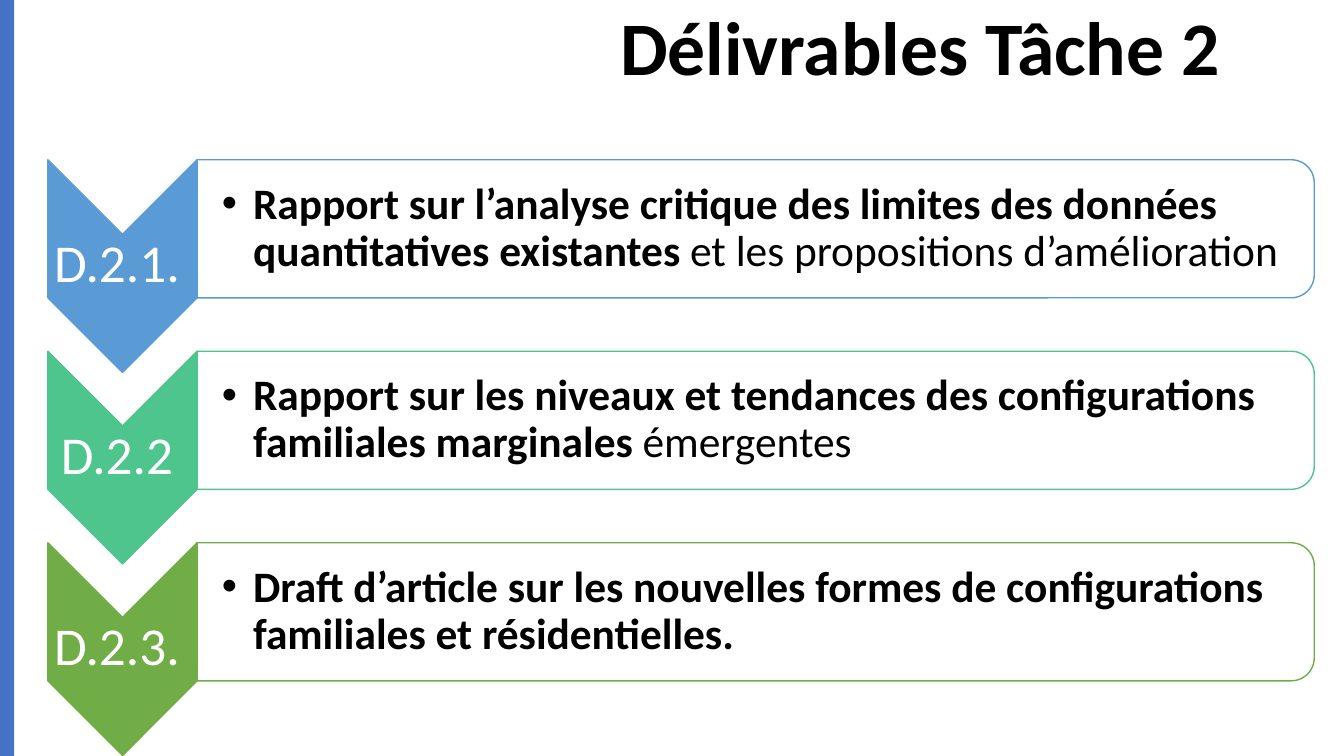
from lxml.etree import SubElement
from pptx import Presentation
from pptx.dml.color import RGBColor
from pptx.enum.shapes import MSO_SHAPE as SHAPE
from pptx.enum.text import MSO_ANCHOR as ANCHOR, MSO_AUTO_SIZE as AUTO_SIZE, PP_ALIGN as ALIGN
from pptx.oxml.ns import qn
from pptx.util import Pt

PX = 9144
BLACK = RGBColor(0x00, 0x00, 0x00)
WHITE = RGBColor(0xFF, 0xFF, 0xFF)
BAR_BLUE = RGBColor(0x44, 0x72, 0xC4)
BLUE = RGBColor(0x5B, 0x9B, 0xD5)
MINT = RGBColor(0x4D, 0xC5, 0x8D)
GREEN = RGBColor(0x70, 0xAD, 0x47)

DELIVERABLES = [
    ("D.2.1. ", BLUE,
     "Rapport sur l’analyse critique des limites des données quantitatives existantes",
     " et les propositions d’amélioration"),
    ("D.2.2 ", MINT,
     "Rapport sur les niveaux et tendances des configurations familiales marginales",
     " émergentes"),
    ("D.2.3. ", GREEN,
     "Draft d’article sur les nouvelles formes de configurations familiales et résidentielles.",
     ""),
]
ROW_STEP = 190


def add_block(preset, left, top, width, height, fill, outline=None):
    block = slide.shapes.add_shape(preset, left * PX, top * PX, width * PX, height * PX)
    block.shadow.inherit = False
    block.fill.solid()
    block.fill.fore_color.rgb = fill
    if outline is None:
        block.line.fill.background()
    else:
        block.rotation = 90
        block.line.color.rgb = outline
        block.line.width = Pt(1)
    return block


def write(shape, parts, size, color, align, margins):
    frame = shape.text_frame
    frame.word_wrap = True
    frame.auto_size = AUTO_SIZE.NONE
    frame.vertical_anchor = ANCHOR.MIDDLE
    frame.margin_left, frame.margin_top, frame.margin_right, frame.margin_bottom = [
        margin * PX for margin in margins]
    paragraph = frame.paragraphs[0]
    paragraph.alignment = align
    paragraph.line_spacing = 0.9
    for words, bold in parts:
        run = paragraph.add_run()
        run.text = words
        run.font.name = "Calibri"
        run.font.size = Pt(size)
        run.font.bold = bold
        run.font.color.rgb = color
    return paragraph


prs = Presentation()
prs.slide_width = 1333 * PX
prs.slide_height = 750 * PX
slide = prs.slides.add_slide(prs.slide_layouts[5])

title = slide.shapes.title
title.left, title.top, title.width, title.height = 605 * PX, -22 * PX, 1032 * PX, 145 * PX
write(title, [("Délivrables Tâche 2", True)], 54, BLACK, ALIGN.LEFT, (10, 5, 10, 5))

add_block(SHAPE.RECTANGLE, 0, 0, 14, 750, BAR_BLUE)

for row, (code, color, key_words, ending) in enumerate(DELIVERABLES):
    offset = row * ROW_STEP
    add_block(SHAPE.CHEVRON, 16, 190 + offset, 211, 148, color, color)
    label = slide.shapes.add_textbox(48 * PX, (232 + offset) * PX, 148 * PX, 63 * PX)
    write(label, [(code, False)], 38, WHITE, ALIGN.CENTER, (3, 3, 3, 3))

    card = add_block(SHAPE.ROUND_2_SAME_RECTANGLE, 681, offset - 327, 137, 1108, WHITE, color)
    card_color = card.fill._xPr.find(qn("a:solidFill"))[0]
    SubElement(card_color, qn("a:alpha"), val="90000")

    description = slide.shapes.add_textbox(196 * PX, (165 + offset) * PX, 1102 * PX, 124 * PX)
    parts = [(key_words, True)]
    if ending:
        parts.append((ending, False))
    item = write(description, parts, 31, BLACK, ALIGN.LEFT, (24, 2, 2, 2))
    properties = item._p.get_or_add_pPr()
    properties.set("marL", str(31 * PX))
    properties.set("indent", str(-31 * PX))
    SubElement(properties, qn("a:buFont"), typeface="Arial")
    SubElement(properties, qn("a:buChar"), char="•")

prs.save("out.pptx")
